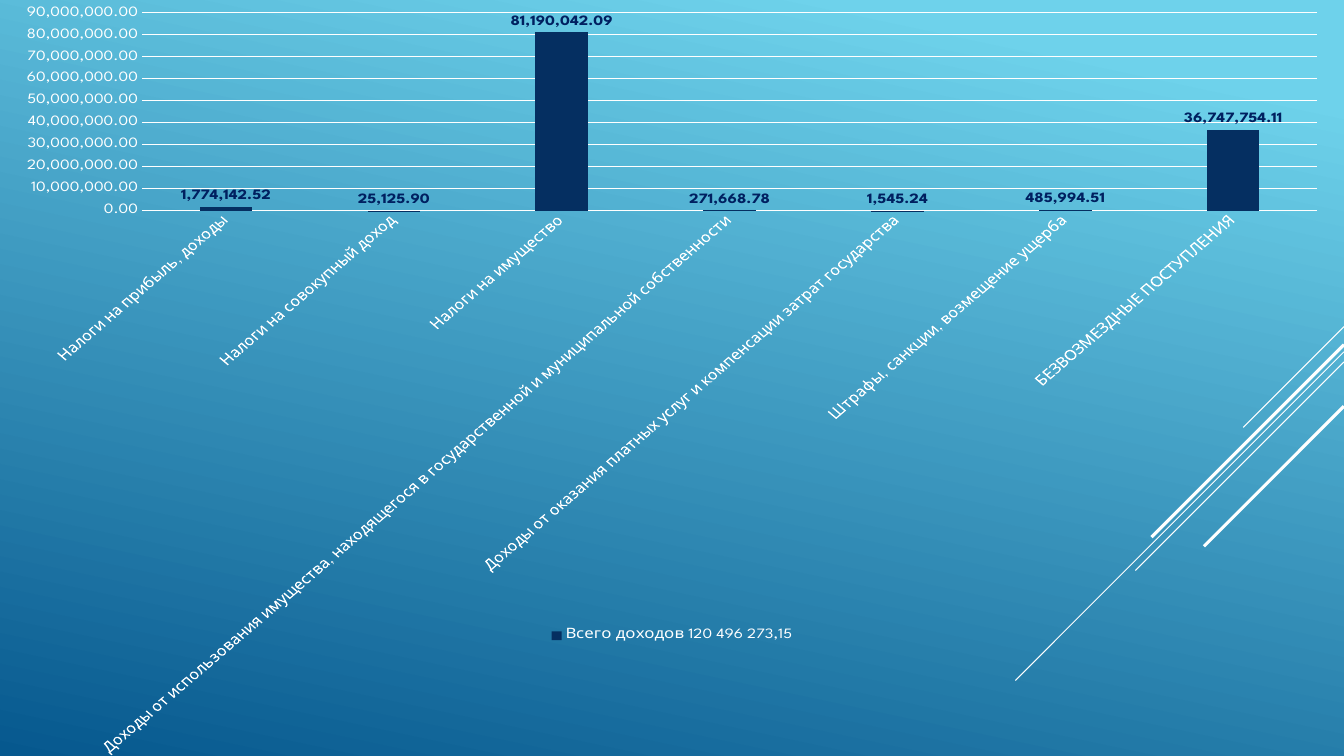
from dataclasses import dataclass

from lxml.etree import SubElement
from pptx import Presentation
from pptx.chart.data import CategoryChartData as Data
from pptx.dml.color import RGBColor as RGB
from pptx.enum.chart import XL_CHART_TYPE as Kind
from pptx.enum.chart import XL_LABEL_POSITION as Spot
from pptx.enum.chart import XL_LEGEND_POSITION as Side
from pptx.enum.chart import XL_TICK_MARK as Tick
from pptx.enum.shapes import MSO_CONNECTOR as Link
from pptx.oxml import parse_xml
from pptx.oxml.ns import nsdecls, qn
from pptx.util import Pt


@dataclass(frozen=True)
class Theme:
    face: str = "League Spartan"
    white: RGB = RGB.from_string("FFFFFF")
    light: RGB = RGB.from_string("6ED2EB")
    deep: RGB = RGB.from_string("06588E")
    bar: RGB = RGB.from_string("052F61")
    label: RGB = RGB.from_string("002060")
    base: int = 10
    text: int = 12
    thin: float = 0.75
    thick: float = 2.25


THEME = Theme()
WIDE, HIGH = 960, 540
MONEY = "#,##0.00"
TITLE = "Всего доходов 120 496 273,15"
INCOME = {
    "Налоги на прибыль, доходы": 1774142.52,
    "Налоги на совокупный доход": 25125.90,
    "Налоги на имущество": 81190042.09,
    "Доходы от использования имущества, находящегося в государственной "
    "и муниципальной собственности": 271668.78,
    "Доходы от оказания платных услуг и компенсации затрат государства": 1545.24,
    "Штрафы, санкции, возмещение ущерба": 485994.51,
    "БЕЗВОЗМЕЗДНЫЕ ПОСТУПЛЕНИЯ": 36747754.11,
}
# Start height on the right edge, reach to the left, line width
RAYS = [
    (233.3, 72, THEME.thin),
    (251.3, 234.7, THEME.thin),
    (258.5, 149, THEME.thin),
    (246.2, 137.5, THEME.thick),
    (290.2, 100, THEME.thick),
]


def put(item, **values):
    for name, value in values.items():
        setattr(item, name, value)


def style(font, size=THEME.text, color=THEME.white, bold=False):
    put(font, name=THEME.face, size=Pt(size), bold=bold)
    font.color.rgb = color


def stroke(line, width=THEME.thin):
    line.color.rgb = THEME.white
    line.width = Pt(width)


def paint(slide):
    fill = slide.background.fill
    fill.gradient()
    fill.gradient_angle = 360 - 102
    stops = [(0.1, THEME.light), (1, THEME.deep)]
    for stop, (place, color) in zip(fill.gradient_stops, stops):
        stop.position = place
        stop.color.rgb = color


def draw_rays(slide, right, top):
    """Draw the diagonal lines that fall from the right edge at 45 degrees."""
    for drop, reach, width in RAYS:
        y = top + drop
        ray = slide.shapes.add_connector(
            Link.STRAIGHT, Pt(right), Pt(y), Pt(right - reach), Pt(y + reach))
        stroke(ray.line, width)
        SubElement(ray.element.spPr, qn("a:effectLst"))


def set_axes(chart):
    cat, val = chart.category_axis, chart.value_axis
    for axis in (cat, val):
        put(axis, major_tick_mark=Tick.NONE, minor_tick_mark=Tick.NONE)
        style(axis.tick_labels.font)
    stroke(cat.format.line)
    val.format.line.fill.background()
    put(val, minimum_scale=0, maximum_scale=90_000_000, major_unit=10_000_000,
        has_major_gridlines=True)
    stroke(val.major_gridlines.format.line)
    put(val.tick_labels, number_format=MONEY, number_format_is_linked=False)
    # -1000 degrees stands for automatic slanting of long labels
    slant = chart.element.xpath(".//c:catAx/c:txPr/a:bodyPr")[0]
    slant.set("rot", str(-1000 * 60000))
    slant.set("vert", "horz")


def set_bars(plot):
    put(plot, gap_width=219, overlap=-27, vary_by_categories=False,
        has_data_labels=True)
    fill = plot.series[0].format.fill
    fill.solid()
    fill.fore_color.rgb = THEME.bar
    labels = plot.data_labels
    put(labels, show_value=True, number_format=MONEY,
        number_format_is_linked=False, position=Spot.OUTSIDE_END)
    style(labels.font, color=THEME.label, bold=True)


def draw_chart(slide, left, top, width, height):
    data = Data(number_format=MONEY)
    data.categories = list(INCOME)
    data.add_series(TITLE, list(INCOME.values()))
    chart = slide.shapes.add_chart(
        Kind.COLUMN_CLUSTERED, Pt(left), Pt(top), Pt(width), Pt(height), data).chart
    put(chart, has_title=False, has_legend=True)
    style(chart.font, THEME.base)
    chart.element.find(qn("c:txPr")).addprevious(parse_xml(
        f'<c:spPr {nsdecls("c", "a")}><a:noFill/><a:ln><a:noFill/></a:ln></c:spPr>'))
    set_axes(chart)
    set_bars(chart.plots[0])
    put(chart.legend, position=Side.BOTTOM, include_in_layout=False)
    style(chart.legend.font)


def main():
    deck = Presentation()
    put(deck, slide_width=Pt(WIDE), slide_height=Pt(HIGH))
    slide = deck.slides.add_slide(deck.slide_layouts[6])
    paint(slide)
    draw_rays(slide, WIDE, 0)
    draw_chart(slide, 0, 0, WIDE, HIGH)
    deck.save("out.pptx")


if __name__ == "__main__":
    main()
